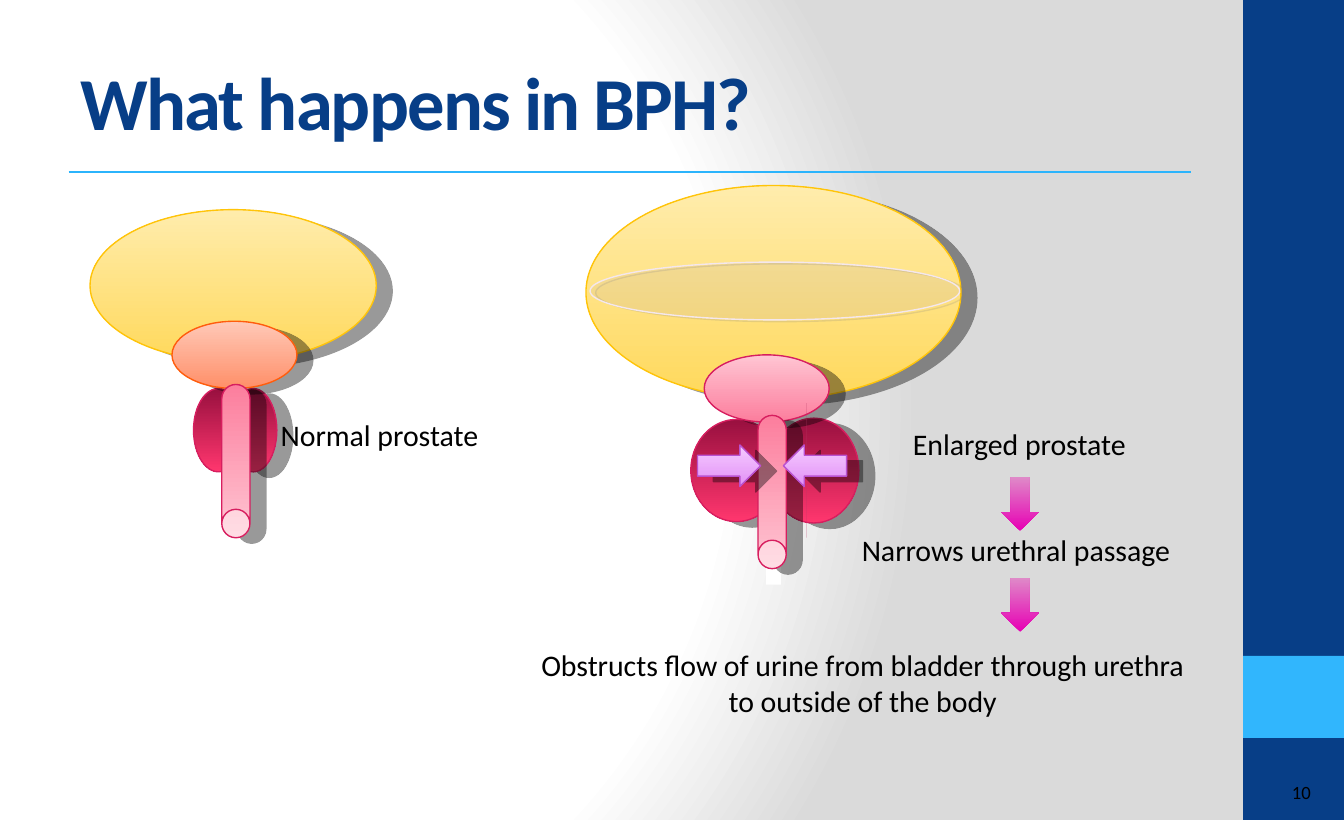
import pptx
import pptx.util
import pptx.dml.color
import pptx.enum.shapes
import pptx.enum.text
import pptx.oxml
import pptx.oxml.ns

Inches, Pt = pptx.util.Inches, pptx.util.Pt
Rgb = pptx.dml.color.RGBColor.from_string
Kind = pptx.enum.shapes.MSO_SHAPE
Align = pptx.enum.text.PP_ALIGN
Anchor = pptx.enum.text.MSO_ANCHOR
qn = pptx.oxml.ns.qn
NS = pptx.oxml.ns.nsdecls("a")

THEME = {
    "font": "Calibri", "navy": "073E87", "sky": "31B6FD", "rule": "2BB4FC",
    "ink": "000000", "white": "FFFFFF", "gray": "DADADA", "slit": "B83D68",
    "title": 40, "body": 16, "small": 10,
}
# Looks: bottom colour, top colour, outline
LOOKS = {
    "gland": ("98103F", "FF366E", "D71E5F"),
    "bladder": ("FFD95C", "FFECAC", "FFC409"),
    "neck": ("FF8F69", "FFC8B7", "FF5D0C"),
    "pink": ("FC7E9D", "FFC5D3", "D71E5F"),
    "push": ("E190F6", "F6CCFF", "BA51D0"),
    "step": ("E700B4", "DF8AC8", None),
}
CAST = ("000000", 40, 9, 19)   # shadow colour, opacity, distance, angle
FAINT = ("808080", 20, 3.2, 18)

BANDS = [((9.25, 0, 0.75, 6.1), "navy"), ((9.25, 4.88, 0.75, 0.61), "sky")]
GLANDS = [
    ((5.14, 3.12, 0.68, 0.76), (5.72, 3.11, 0.67, 0.78), (5.7, 3.11, 0.11, 1.24)),
    ((1.44, 2.89, 0.37, 0.62), (1.71, 2.89, 0.35, 0.62), (1.7, 2.8, 0.11, 1.24)),
]
NORMAL = [
    (Kind.OVAL, (0.67, 1.56, 2.13, 1.13), "bladder"),
    (Kind.OVAL, (1.28, 2.39, 0.93, 0.5), "neck"),
    (Kind.CAN, (1.65, 2.86, 0.21, 1.14), "pink"),
]
LARGE = [
    (Kind.OVAL, (4.36, 1.38, 2.79, 1.59), "bladder"),
    (Kind.OVAL, (5.24, 2.64, 0.93, 0.5), "pink"),
]
LEVEL = (4.39, 1.95, 2.75, 0.43)
TUBE = (Kind.CAN, (5.64, 3.09, 0.21, 1.14), "pink")
# Each slit: a start, then cubic curves as two handles and an end
SLITS = [
    ((5.63, 3.35), [((5.63, 3.45), (5.61, 3.76), (5.63, 3.79)),
                    ((5.64, 3.81), (5.69, 3.62), (5.69, 3.51)),
                    ((5.69, 3.41), (5.64, 3.19), (5.63, 3.17))]),
    ((5.85, 3.35), [((5.85, 3.44), (5.86, 3.71), (5.85, 3.73)),
                    ((5.84, 3.75), (5.77, 3.58), (5.77, 3.49)),
                    ((5.77, 3.4), (5.84, 3.21), (5.85, 3.19))]),
]
PUSHES = [((5.83, 3.31, 0.47, 0.31), True), ((5.19, 3.31, 0.47, 0.31), False)]
STEPS = [(7.45, 3.55, 0.28, 0.4), (7.45, 4.3, 0.28, 0.4)]
TITLE = ("What happens in BPH?", (0.5, 0.24, 8.33, 1.02))
LABELS = [  # text, box, alignment, wrap, size
    ("Normal prostate", (1.99, 3.05, 1.74, 0.37), Align.LEFT, False, "body"),
    ("Enlarged prostate", (6.68, 3.12, 1.81, 0.37), Align.CENTER, True, "body"),
    ("Narrows urethral passage ", (6.3, 3.91, 2.57, 0.37), Align.CENTER, False, "body"),
    ("Obstructs flow of urine from bladder through urethra to outside of the body",
     (3.84, 4.76, 5.16, 0.64), Align.CENTER, True, "body"),
    ("10", (8.77, 5.76, 1.08, 0.27), Align.RIGHT, True, "small"),
]

deck = pptx.Presentation()
deck.slide_width, deck.slide_height = Inches(10), Inches(6.1)
slide = deck.slides.add_slide(deck.slide_layouts[5])
shapes = slide.shapes


def inch(box):
    return [Inches(v) for v in box]


def paint(shape, color):
    shape.shadow.inherit = False
    shape.fill.solid()
    shape.fill.fore_color.rgb = Rgb(color)
    shape.line.fill.background()


def edge(shape, color):
    shape.line.color.rgb = Rgb(color)
    shape.line.width = Pt(0.75)


def cast(shape, color, alpha, dist, angle):
    """Give the shape a hard shadow."""
    shape.shadow.inherit = False
    shape.element.spPr.find(qn("a:effectLst")).append(pptx.oxml.parse_xml(
        f'<a:outerShdw {NS} blurRad="0" dist="{Pt(dist)}" dir="{angle * 60000}"'
        f' rotWithShape="0"><a:srgbClr val="{color}"><a:alpha val="{alpha * 1000}"/>'
        '</a:srgbClr></a:outerShdw>'))


def block(box, color):
    paint(shapes.add_shape(Kind.RECTANGLE, *inch(box)), color)


def part(kind, box, look, turn=0):
    """Add a shaded shape; only outlined ones cast a shadow."""
    low, high, line = LOOKS[look]
    shape = shapes.add_shape(kind, *inch(box))
    shape.rotation = turn
    paint(shape, low)
    shape.fill.gradient()
    shape.fill.gradient_angle = 90
    for stop, color in zip(shape.fill.gradient_stops, (low, high)):
        stop.color.rgb = Rgb(color)
    if kind == Kind.CAN:
        shape.rotation = 180
        shape.adjustments[0] = 1.008
    if line:
        edge(shape, line)
        cast(shape, *CAST)
    return shape


def slit(start, curves, steps=8):
    """Trace the cubic curves as short lines."""
    dots, a = [], start
    for b, c, d in curves:
        for t in (i / steps for i in range(1, steps + 1)):
            u = 1 - t
            dots.append(tuple(
                u**3 * p + 3 * u * u * t * q + 3 * u * t * t * r + t**3 * s
                for p, q, r, s in zip(a, b, c, d)))
        a = d
    pen = shapes.build_freeform(*start, scale=Inches(1))
    pen.add_line_segments(dots, close=True)
    paint(pen.convert_to_shape(), THEME["slit"])


def write(frame, text, size, color, align):
    para = frame.paragraphs[0]
    para.alignment = align
    run = para.add_run()
    run.text = text
    run.font.name, run.font.size = THEME["font"], Pt(THEME[size])
    run.font.color.rgb = Rgb(THEME[color])
    return run


# Background: a round blend from white to gray
slide.background.fill.solid()
back = slide.element.find(".//" + qn("p:bgPr"))
stops = "".join(
    f'<a:gs pos="{at * 1000}"><a:srgbClr val="{THEME[name]}"/></a:gs>'
    for at, name in ((0, "white"), (75, "white"), (100, "gray")))
back.replace(back[0], pptx.oxml.parse_xml(
    f'<a:gradFill {NS} rotWithShape="1"><a:gsLst>{stops}</a:gsLst><a:path path="circle">'
    '<a:fillToRect l="20000" t="50000" r="100000" b="50000"/></a:path></a:gradFill>'))

for box, name in BANDS:
    block(box, THEME[name])
for left, right, gap in GLANDS:
    for box in (left, right):
        part(Kind.OVAL, box, "gland", 180)
    block(gap, THEME["white"])
for item in NORMAL + LARGE:
    part(*item)

level = shapes.add_shape(Kind.OVAL, *inch(LEVEL))
paint(level, "3333FF")
level.element.spPr.find(qn("a:solidFill"))[0].append(
    pptx.oxml.parse_xml(f'<a:alpha {NS} val="5000"/>'))
edge(level, "F4E7ED")
cast(level, *FAINT)

part(*TUBE)
for start, curves in SLITS:
    slit(start, curves)
for box, flip in PUSHES:
    arrow = part(Kind.RIGHT_ARROW, box, "push")
    if flip:
        arrow.element.spPr.find(qn("a:xfrm")).set("flipH", "1")
for box in STEPS:
    part(Kind.DOWN_ARROW, box, "step")

for text, box, align, wrap, size in LABELS:
    frame = shapes.add_textbox(*inch(box)).text_frame
    frame.word_wrap = wrap
    if size == "small":
        frame.vertical_anchor = Anchor.MIDDLE
    write(frame, text, size, "ink", align)

text, box = TITLE
head = shapes.title
head.left, head.top, head.width, head.height = inch(box)
head.text_frame.vertical_anchor = Anchor.MIDDLE
run = write(head.text_frame, text, "title", "navy", Align.LEFT)
run.font.bold = True
run.font._element.set("spc", "-100")

rule = shapes.add_connector(
    pptx.enum.shapes.MSO_CONNECTOR.STRAIGHT, *inch((0.51, 1.28, 8.86, 1.28)))
rule.line.color.rgb = Rgb(THEME["rule"])
rule.line.width = Pt(1)
rule.element.spPr.append(pptx.oxml.parse_xml(f"<a:effectLst {NS}/>"))

deck.save("out.pptx")
